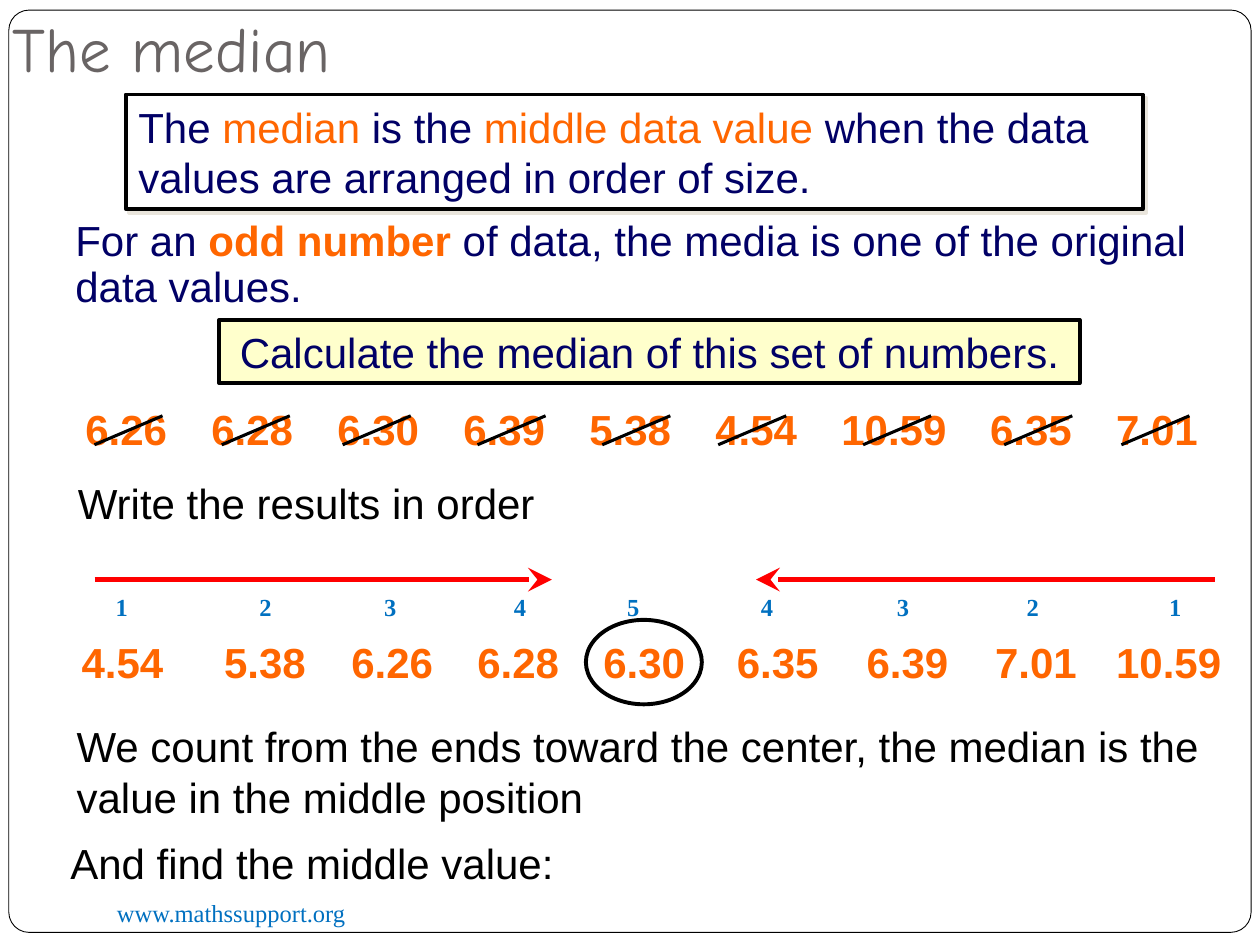
"""Build a slide that explains the median of an odd number of data values."""
import pptx
import pptx.dml.color
import pptx.enum.shapes
import pptx.enum.text
import pptx.oxml.ns
import pptx.util
from lxml import etree

RGBColor = pptx.dml.color.RGBColor
MSO_SHAPE = pptx.enum.shapes.MSO_SHAPE
PP_ALIGN = pptx.enum.text.PP_ALIGN
qn = pptx.oxml.ns.qn

BLACK = RGBColor(0x00, 0x00, 0x00)
WHITE = RGBColor(0xFF, 0xFF, 0xFF)
NAVY = RGBColor(0x01, 0x00, 0x66)
ORANGE = RGBColor(0xFF, 0x66, 0x00)
BLUE = RGBColor(0x00, 0x70, 0xC0)
RED = RGBColor(0xFF, 0x00, 0x00)
GREY = RGBColor(0x69, 0x64, 0x64)
CREAM = RGBColor(0xFF, 0xFF, 0xCC)

deck = pptx.Presentation()
deck.slide_width = pptx.util.Inches(10)
deck.slide_height = pptx.util.Inches(7.5)
COLUMN = deck.slide_width / 100
ROW = deck.slide_height / 75
page = deck.slides.add_slide(deck.slide_layouts[5])


def add_box(columns, rows, width, height, spans, colour, size=24, font="Arial",
            bold=False, wrap=True, outline=None, fill=None, line_width=2.25):
    """Place text at a grid position, in a preset outline if one is given."""
    place = (int(columns * COLUMN), int(rows * ROW), int(width * COLUMN), int(height * ROW))
    if outline is None:
        box = page.shapes.add_textbox(*place)
    else:
        box = page.shapes.add_shape(outline, *place)
        box.shadow.inherit = False
        box.line.color.rgb = BLACK
        box.line.width = pptx.util.Pt(line_width)
        if fill is None:
            box.fill.background()
        else:
            box.fill.solid()
            box.fill.fore_color.rgb = fill
    box.text_frame.word_wrap = wrap
    para = box.text_frame.paragraphs[0]
    para.alignment = PP_ALIGN.LEFT
    para.font.size = pptx.util.Pt(size)
    para.font.name = font
    para.font.bold = bold
    para.font.color.rgb = colour
    for text, accent in spans:
        span = para.add_run()
        span.text = text
        if accent:
            span.font.color.rgb = accent
    return box


def add_line(start, end, row, end_row, colour, width):
    """Draw a straight line without a shadow between two grid positions."""
    line = page.shapes.add_connector(
        pptx.enum.shapes.MSO_CONNECTOR.STRAIGHT,
        int(start * COLUMN), int(row * ROW), int(end * COLUMN), int(end_row * ROW))
    line.line.color.rgb = colour
    line.line.width = pptx.util.Pt(width)
    etree.SubElement(line._element.spPr, qn("a:effectLst"))
    return line


frame = add_box(0.7, 0.8, 98.6, 73.2, [], BLACK, outline=MSO_SHAPE.ROUNDED_RECTANGLE,
                fill=WHITE, line_width=0.5)
frame.adjustments[0] = 0.022
page.shapes._spTree.insert(2, frame._element)

title = page.shapes.title
title.left, title.top = 0, int(1.1 * ROW)
title.width, title.height = int(40 * COLUMN), int(5.8 * ROW)
title.text_frame.text = "The median"
title.text_frame.auto_size = pptx.enum.text.MSO_AUTO_SIZE.NONE
title.text_frame.vertical_anchor = pptx.enum.text.MSO_ANCHOR.MIDDLE
title.text_frame.margin_bottom = pptx.util.Inches(0.1)
heading = title.text_frame.paragraphs[0]
heading.alignment = PP_ALIGN.LEFT
heading.font.size = pptx.util.Pt(36)
heading.font.name = "Comic Neue"
heading.font.color.rgb = GREY

add_box(8.3, 70.8, 32.5, 3.4, [("www.mathssupport.org", None)], BLUE, 14, "Times New Roman")

definition = add_box(
    10, 7.5, 80.7, 9.1,
    [("The ", None), ("median", ORANGE), (" is the ", None), ("middle data value ", ORANGE),
     ("when the data values are arranged in order of size.", None)],
    NAVY, outline=MSO_SHAPE.RECTANGLE, fill=WHITE)
effects = definition._element.spPr.find(qn("a:effectLst"))
shadow = etree.SubElement(effects, qn("a:outerShdw"), dist="35560", dir="2700000",
                          algn="ctr", rotWithShape="0")
etree.SubElement(shadow, qn("a:srgbClr"), val="E9E5DC")

odd_case = add_box(
    5, 17, 90.6, 8.3,
    [("For an ", None), ("odd number ", ORANGE),
     ("of data, the media is one of the original data values.", None)], NAVY)
odd_case.text_frame.paragraphs[0].line_spacing = 0.9
odd_case.text_frame.paragraphs[0].runs[1].font.bold = True

task = add_box(17.4, 25.4, 68.3, 5, [("Calculate the median of this set of numbers.", None)],
               NAVY, outline=MSO_SHAPE.RECTANGLE, fill=CREAM)
task.text_frame.paragraphs[0].alignment = PP_ALIGN.CENTER

data = ["6.26", "6.28", "6.30", "6.39", "5.38", "4.54", "10.59", "6.35", "7.01"]
data_row = add_box(5.8, 31.5, 90.6, 5, [], ORANGE, bold=True)
data_para = data_row.text_frame.paragraphs[0]
tab_list = etree.Element(qn("a:tabLst"))
for stop in (10, 20, 30, 40, 50, 60, 71.8, 81.8):
    etree.SubElement(tab_list, qn("a:tab"), pos=str(int(stop * COLUMN)), algn="l")
data_para._p.pPr.insert(0, tab_list)
data_para.add_run().text = "\t".join(data)

add_box(5.2, 37.4, 38.6, 5, [("Write the results in order", None)], BLACK, wrap=False)
add_box(5.1, 56.7, 93, 9.1,
        [("We count from the ends toward the center, the median is the value "
          "in the middle position", None)], BLACK)
add_box(4.6, 66, 40.8, 5, [("And find the middle value:", None)], BLACK, wrap=False)

value_columns = [5.5, 16.8, 26.9, 36.9, 46.9, 57.5, 67.8, 78, 87.6]
rank_columns = [8.2, 19.6, 29.5, 39.8, 48.8, 59.4, 70.2, 80.5, 91.8]
strike_columns = [7.5, 17.6, 27.2, 37.9, 47.8, 57, 68.5, 79.7, 89]
ordered = sorted(data, key=float)
for index, value in enumerate(ordered):
    rank = min(index, len(ordered) - 1 - index) + 1
    width = 10.5 if len(value) > 4 else 8.6
    add_box(value_columns[index], 50, width, 5, [(value, None)], ORANGE, bold=True, wrap=False)
    add_box(rank_columns[index], 46.5, 3, 3.4, [(str(rank), None)], BLUE, 14,
            "Times New Roman", bold=True, wrap=False)
    add_line(strike_columns[index] + 5.4, strike_columns[index], 33, 35.3, BLACK, 1.75)

add_box(46.5, 49.2, 9.2, 6.7, [], BLACK, outline=MSO_SHAPE.OVAL)

for start, end in ((7.5, 43.8), (96.4, 60)):
    arrow = add_line(start, end, 46, 46, RED, 2.75)
    etree.SubElement(arrow.line._get_or_add_ln(), qn("a:tailEnd"), type="stealth",
                     w="lg", len="lg")

deck.save("out.pptx")
